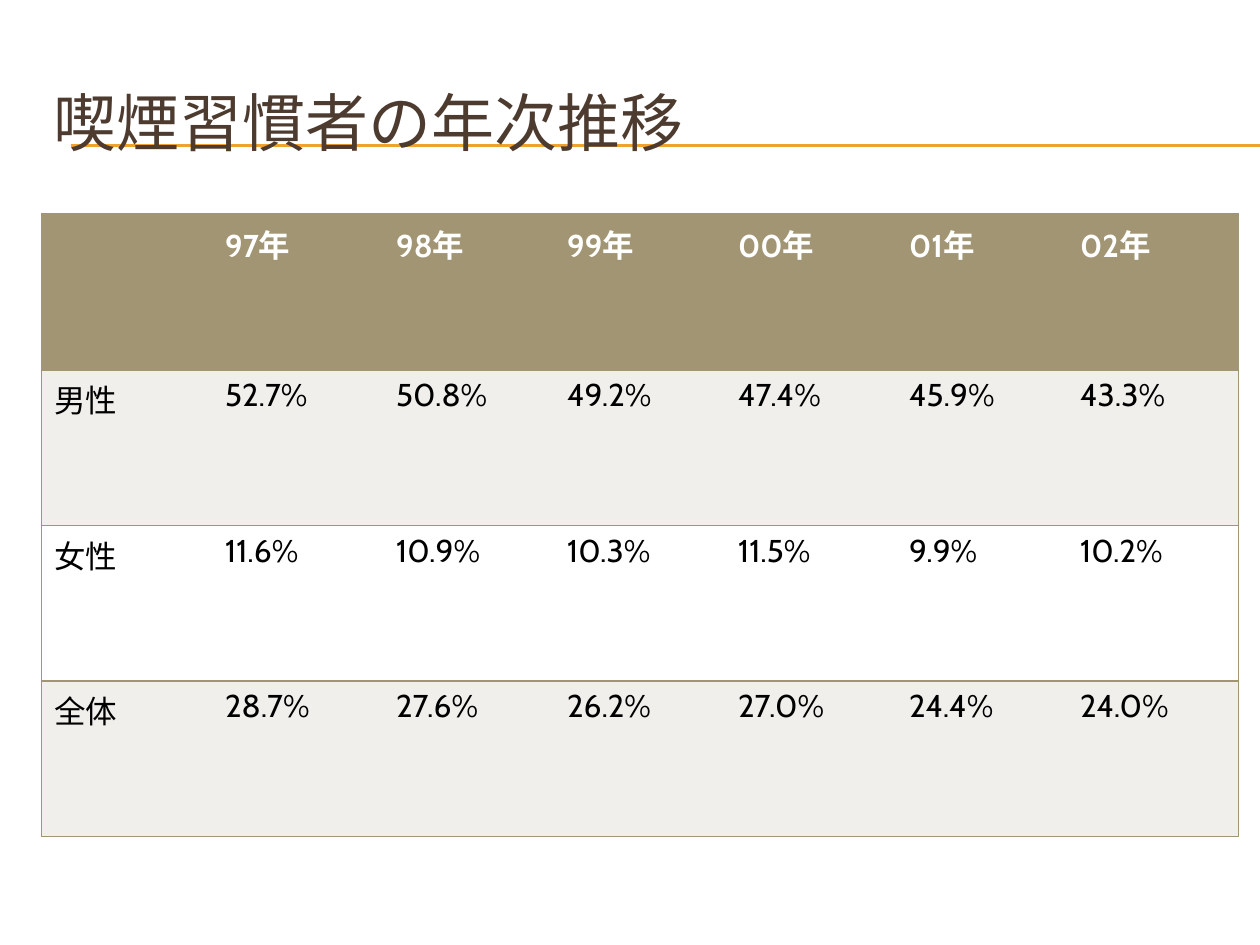
from lxml import etree
from pptx import Presentation
from pptx.dml.color import RGBColor
from pptx.enum.shapes import MSO_CONNECTOR
from pptx.enum.text import MSO_ANCHOR
from pptx.oxml.ns import qn
from pptx.util import Inches, Pt

STRAIGHT = MSO_CONNECTOR.STRAIGHT
MIDDLE = MSO_ANCHOR.MIDDLE

FONT = "Cabin"
BROWN = RGBColor(0x4E, 0x3B, 0x30)
ORANGE = RGBColor(0xF0, 0xA2, 0x2E)
KHAKI = RGBColor(0xA1, 0x95, 0x74)
PALE = RGBColor(0xF0, 0xEF, 0xEB)
WHITE = RGBColor(0xFF, 0xFF, 0xFF)
BLACK = RGBColor(0, 0, 0)

TITLE = "喫煙習慣者の年次推移"
ROWS = [
    ["", "97年", "98年", "99年", "00年", "01年", "02年"],
    ["男性", "52.7%", "50.8%", "49.2%", "47.4%", "45.9%", "43.3%"],
    ["女性", "11.6%", "10.9%", "10.3%", "11.5%", "9.9%", "10.2%"],
    ["全体", "28.7%", "27.6%", "26.2%", "27.0%", "24.4%", "24.0%"],
]
LEFT, WIDTH = 0.33, 9.5
TABLE_TOP, TABLE_HEIGHT = 1.7, 4.94


def add_run(p, text, size, color, bold=False):
    r = p.add_run()
    r.text = text
    r.font.name = FONT
    r.font.size = Pt(size)
    r.font.bold = bold
    r.font.color.rgb = color


def add_rule(s, y):
    line = s.shapes.add_connector(STRAIGHT, Inches(0.56), Inches(y), Inches(10), Inches(y))
    line.line.color.rgb = ORANGE
    line.line.width = Pt(0.75)
    etree.SubElement(line._element.spPr, qn("a:effectLst"))


def set_borders(cell, visible):
    """Draw the sides named in visible (letters of LRTB) and blank the rest."""
    tcPr = cell._tc.get_or_add_tcPr()
    for i, side in enumerate("LRTB"):
        ln = etree.Element(qn(f"a:ln{side}"), w=str(Pt(1)))
        if side in visible:
            fill = etree.SubElement(ln, qn("a:solidFill"))
            etree.SubElement(fill, qn("a:srgbClr"), val=str(KHAKI))
        else:
            etree.SubElement(ln, qn("a:noFill"))
        tcPr.insert(i, ln)


def add_title(s):
    tf = s.shapes.add_textbox(Inches(LEFT), Inches(0.5), Inches(WIDTH), Inches(0.92)).text_frame
    tf.word_wrap = True
    tf.vertical_anchor = MIDDLE
    add_run(tf.paragraphs[0], TITLE, 36, BROWN)


def add_rates_table(s):
    n_cols = len(ROWS[0])
    table = s.shapes.add_table(len(ROWS), n_cols, Inches(LEFT), Inches(TABLE_TOP),
                               Inches(WIDTH), Inches(TABLE_HEIGHT)).table
    for i, row in enumerate(ROWS):
        header = i == 0
        for j, text in enumerate(row):
            cell = table.cell(i, j)
            cell.fill.solid()
            cell.fill.fore_color.rgb = KHAKI if header else PALE if i % 2 else WHITE
            set_borders(cell, "TB" + "L" * (j == 0) + "R" * (j == n_cols - 1))
            if text:
                add_run(cell.text_frame.paragraphs[0], text, 18,
                        WHITE if header else BLACK, header)


def main():
    prs = Presentation()
    prs.slide_width, prs.slide_height = Inches(10), Inches(7.5)
    s = prs.slides.add_slide(prs.slide_layouts[6])
    for y in (1.15, 1.16):
        add_rule(s, y)
    add_title(s)
    add_rates_table(s)
    prs.save("out.pptx")


if __name__ == "__main__":
    main()
